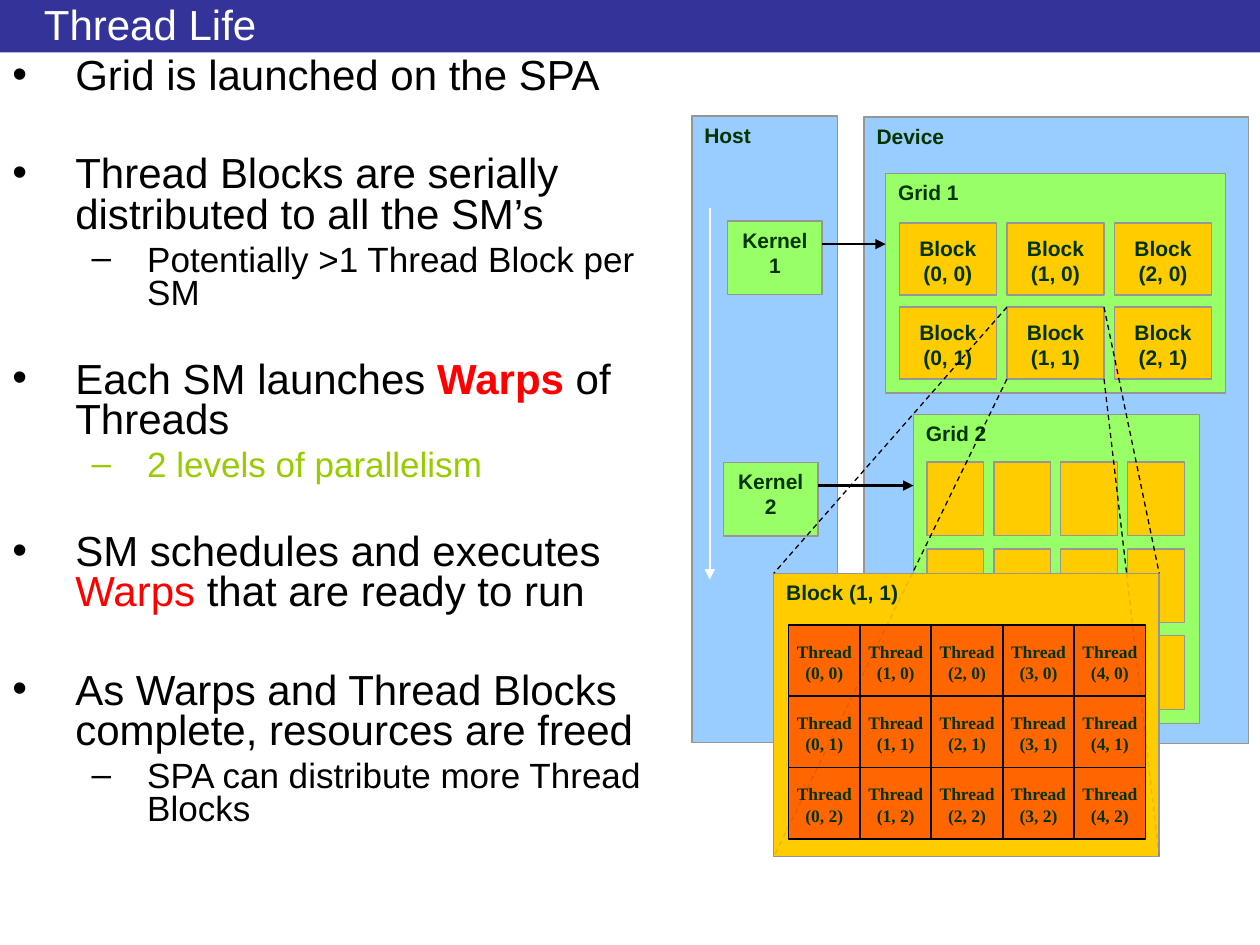
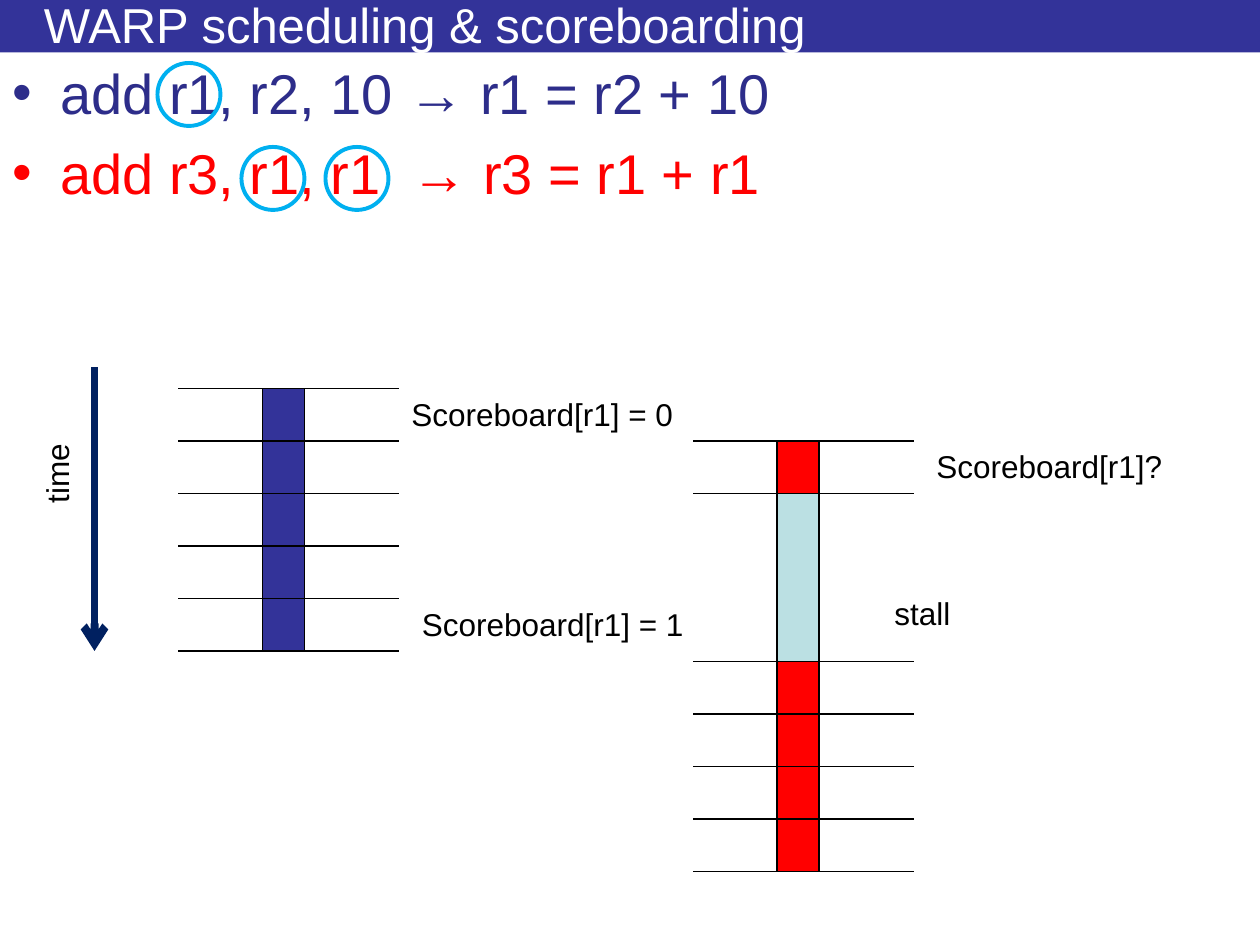
from collections import namedtuple
from pptx import Presentation
from pptx.dml.color import RGBColor
from pptx.enum.dml import MSO_LINE
from pptx.enum.shapes import MSO_CONNECTOR, MSO_SHAPE
from pptx.enum.text import MSO_ANCHOR, PP_ALIGN
from pptx.oxml.ns import qn
from pptx.util import Inches, Pt
from lxml import etree

RECT, OVAL = MSO_SHAPE.RECTANGLE, MSO_SHAPE.OVAL
STRAIGHT, DASH = MSO_CONNECTOR.STRAIGHT, MSO_LINE.DASH
LEFT, CENTER = PP_ALIGN.LEFT, PP_ALIGN.CENTER
TOP, MIDDLE = MSO_ANCHOR.TOP, MSO_ANCHOR.MIDDLE

C = {
    "band": "333399", "white": "FFFFFF", "black": "000000", "red": "FF0000",
    "lime": "99CC00", "indigo": "2D2D8A", "panel": "99CCFF", "grid": "99FF66",
    "block": "FFCC00", "thread": "FF6600", "edge": "969696", "label": "003300",
    "time": "002060", "stall": "BBE0E3", "ring": "00B0F0",
}
COLS, ROWS = 120, 90
INSETS = (0.1, 0.05, 0.1, 0.05)

Box = namedtuple("Box", "x y w h")
Run = namedtuple("Run", "text color bold", defaults=("black", False))
Item = namedtuple("Item", "runs level before", defaults=(0, 0))


def unit(n):
    return Inches(n * 10 / COLS)


def within(box, x, y, w, h):
    return Box(box.x + x, box.y + y, w, h)


def add_text(shape, paras, size=12, color="label", bold=False, font="Arial",
             align=LEFT, anchor=TOP, insets=INSETS, wrap=True):
    tf = shape.text_frame
    tf.word_wrap, tf.vertical_anchor = wrap, anchor
    tf.margin_left, tf.margin_top, tf.margin_right, tf.margin_bottom = map(Inches, insets)
    for i, runs in enumerate(paras):
        p = tf.paragraphs[0] if i == 0 else tf.add_paragraph()
        p.alignment = align
        for run in [Run(runs, color, bold)] if isinstance(runs, str) else runs:
            r = p.add_run()
            r.text = run.text
            r.font.name, r.font.size, r.font.bold = font, Pt(size), run.bold
            r.font.color.rgb = RGBColor.from_string(C[run.color])
    return tf


def add_box(s, box, fill=None, line="edge", weight=0.75, kind=RECT):
    sp = s.shapes.add_shape(kind, *map(unit, box))
    sp.shadow.inherit = False
    if fill:
        sp.fill.solid()
        sp.fill.fore_color.rgb = RGBColor.from_string(C[fill])
    else:
        sp.fill.background()
    if line:
        sp.line.color.rgb = RGBColor.from_string(C[line])
        sp.line.width = Pt(weight)
    else:
        sp.line.fill.background()
    return sp


def add_line(s, x1, y1, x2, y2, color="black", weight=0.75, head=None, dash=False, alpha=None):
    cn = s.shapes.add_connector(STRAIGHT, *map(unit, (x1, y1, x2, y2)))
    cn.line.color.rgb = RGBColor.from_string(C[color])
    cn.line.width = Pt(weight)
    if dash:
        cn.line.dash_style = DASH
    ln = cn.line._get_or_add_ln()
    if alpha:
        clr = ln.find(".//" + qn("a:srgbClr"))
        etree.SubElement(clr, qn("a:alpha"), val=str(alpha * 1000))
    if head:
        etree.SubElement(ln, qn("a:tailEnd"), type=head)
    etree.SubElement(cn._element.spPr, qn("a:effectLst"))


def add_label(s, box, text, **fmt):
    tb = s.shapes.add_textbox(*map(unit, box))
    add_text(tb, [text], **fmt)
    return tb


def add_bullets(s, box, items, sizes, indents, spacing=1):
    tb = s.shapes.add_textbox(*map(unit, box))
    tf = add_text(tb, [])
    for i, item in enumerate(items):
        p = tf.paragraphs[0] if i == 0 else tf.add_paragraph()
        p.line_spacing, p.space_before = spacing, Pt(item.before)
        for run in item.runs:
            r = p.add_run()
            r.text = run.text
            r.font.name, r.font.size, r.font.bold = "Arial", Pt(sizes[item.level]), run.bold
            r.font.color.rgb = RGBColor.from_string(C[run.color])
        margin, hang = indents[item.level]
        pPr = p._p.get_or_add_pPr()
        pPr.set("marL", str(Inches(margin)))
        pPr.set("indent", str(-Inches(hang)))
        etree.SubElement(pPr, qn("a:buFont"), typeface="Arial")
        etree.SubElement(pPr, qn("a:buChar"), char="•–"[item.level])


def new_slide(prs, title, size):
    s = prs.slides.add_slide(prs.slide_layouts[6])
    add_box(s, Box(0, 0, COLS, 5), "band", None)
    add_label(s, Box(3, 0.6, 111, 3.4), title, size=size, color="white", anchor=MIDDLE)
    return s


def panel(s, box, fill, title):
    add_text(add_box(s, box, fill), [title], bold=True)


def host(s, box):
    panel(s, box, "panel", "Host")
    kernels = [within(box, 3.4, 10, 9, 7), within(box, 3, 33, 9, 7)]
    for i, kernel in enumerate(kernels, 1):
        add_text(add_box(s, kernel, "grid"), [f"Kernel {i}"], bold=True, align=CENTER)
    add_line(s, box.x + 1.7, box.y + 8.75, box.x + 1.7, box.y + 44.15, "white", 1, "triangle")
    return kernels


def device(s, box):
    panel(s, box, "panel", "Device")
    grids = [within(box, 2.05, 5.4, 32.4, 20.9), within(box, 4.7, 28.3, 27.25, 29.5)]
    for i, grid in enumerate(grids, 1):
        panel(s, grid, "grid", f"Grid {i}")
    for row in range(2):
        for col in range(3):
            block = within(grids[0], 1.3 + col * 10.25, 4.7 + row * 8, 9.25, 6.85)
            add_text(add_box(s, block, "block"), ["Block", f"({col}, {row})"],
                     bold=True, align=CENTER, insets=(0, 0.1, 0, 0))
    for row in range(3):
        for col in range(3 if row == 2 else 0, 4):
            add_box(s, within(grids[1], 1.3 + col * 6.36, 4.55 + row * 8.28, 5.4, 7), "block")
    return grids, within(grids[0], 11.55, 12.7, 9.25, 6.85)


def thread_block(s, box):
    panel(s, box, "block", "Block (1, 1)")
    w, h = 6.8, 6.8
    for row in range(3):
        for col in range(5):
            cell = add_box(s, within(box, 1.4 + col * w, 4.9 + row * h, w, h),
                           "thread", "black", 1)
            add_text(cell, ["Thread", f"({col}, {row})"], size=10, bold=True,
                     font="Times New Roman", align=CENTER, anchor=MIDDLE,
                     insets=(0, 0.02, 0, 0), wrap=False)


def zoom_lines(s, src, dst):
    right, low = src.x + src.w, src.y + src.h
    inner_left, inner_right = dst.x + 13.2, dst.x + 33.6
    far, bottom = dst.x + dst.w, dst.y + dst.h
    for ends in [(src.x, src.y, dst.x, dst.y), (right, src.y, far, dst.y),
                 (src.x, low, inner_left, dst.y), (right, low, inner_right, dst.y)]:
        add_line(s, *ends, dash=True)
    for ends in [(inner_left, dst.y, dst.x, bottom), (inner_right, dst.y, far, bottom)]:
        add_line(s, *ends, dash=True, alpha=10)


def thread_life(prs):
    s = new_slide(prs, "Thread Life", 24)
    items = [
        Item([Run("Grid is launched on the SPA")], 0, 5),
        Item([Run("Thread Blocks are serially distributed to all the SM’s")], 0, 33),
        Item([Run("Potentially >1 Thread Block per SM")], 1, 4.5),
        Item([Run("Each SM launches "), Run("Warps", "red", True), Run(" of Threads")], 0, 28.5),
        Item([Run("2 levels of parallelism", "lime")], 1, 4.5),
        Item([Run("SM schedules and executes "), Run("Warps", "red"),
              Run(" that are ready to run")], 0, 28.5),
        Item([Run("As Warps and Thread Blocks complete, resources are freed")], 0, 33),
        Item([Run("SPA can distribute more Thread Blocks")], 1, 4.5),
    ]
    add_bullets(s, Box(0, 5, 67, 83), items, (24, 20), ((0.5, 0.5), (1.07, 0.44)), 0.8)
    kernels = host(s, Box(65.9, 11.05, 13.9, 59.65))
    grids, source = device(s, Box(82.3, 11.15, 36.6, 59.65))
    zoom = Box(73.7, 54.6, 36.7, 27)
    thread_block(s, zoom)
    for kernel, grid in zip(kernels, grids):
        y = kernel.y + 2.2
        add_line(s, kernel.x + kernel.w, y, grid.x, y, weight=1.5, head="triangle")
    zoom_lines(s, source, zoom)


def stages(s, box, fill):
    add_box(s, within(box, 8, 0, 4, box.h), fill, "black")
    for y in range(box.y, box.y + box.h + 1, 5):
        add_line(s, box.x, y, box.x + box.w, y)


def time_axis(s, box):
    x = box.x + box.w
    add_line(s, x, box.y, x, box.y + box.h, "time", 4.5, "arrow")
    tb = add_label(s, within(box, -1.7, 7.6, 8.2, 4.8), "time", size=18, color="black", wrap=False)
    tb.rotation = 270


def scoreboarding(prs):
    s = new_slide(prs, "WARP scheduling & scoreboarding", 28)
    items = [Item([Run("add r1, r2, 10 → r1 = r2 + 10", "indigo")], 0, 7),
             Item([Run("add r3, r1, r1  → r3 = r1 + r1", "red")], 0, 7)]
    add_bullets(s, Box(0, 5, COLS, 10), items, (32,), ((0.38, 0.38),))
    time_axis(s, Box(3, 35, 6, 27))
    stages(s, Box(17, 37, 21, 25), "band")
    stages(s, Box(66, 63, 21, 20), "red")
    stages(s, Box(66, 42, 21, 5), "red")
    add_box(s, Box(74, 47, 4, 16), "stall", "black")
    for x, y, w, text in [(38, 37, 27.6, "Scoreboard[r1] = 0"), (39, 57, 27.6, "Scoreboard[r1] = 1"),
                          (88, 42, 24.1, "Scoreboard[r1]?"), (84, 56, 7.8, "stall")]:
        add_label(s, Box(x, y, w, 4.8), text, size=18, color="black", wrap=False)
    for x, y in [(15, 6), (23, 14), (31, 14)]:
        add_box(s, Box(x, y, 6, 6), None, "ring", 2.25, OVAL)


def main():
    prs = Presentation()
    prs.slide_width, prs.slide_height = unit(COLS), unit(ROWS)
    thread_life(prs)
    scoreboarding(prs)
    prs.save("out.pptx")


if __name__ == "__main__":
    main()
